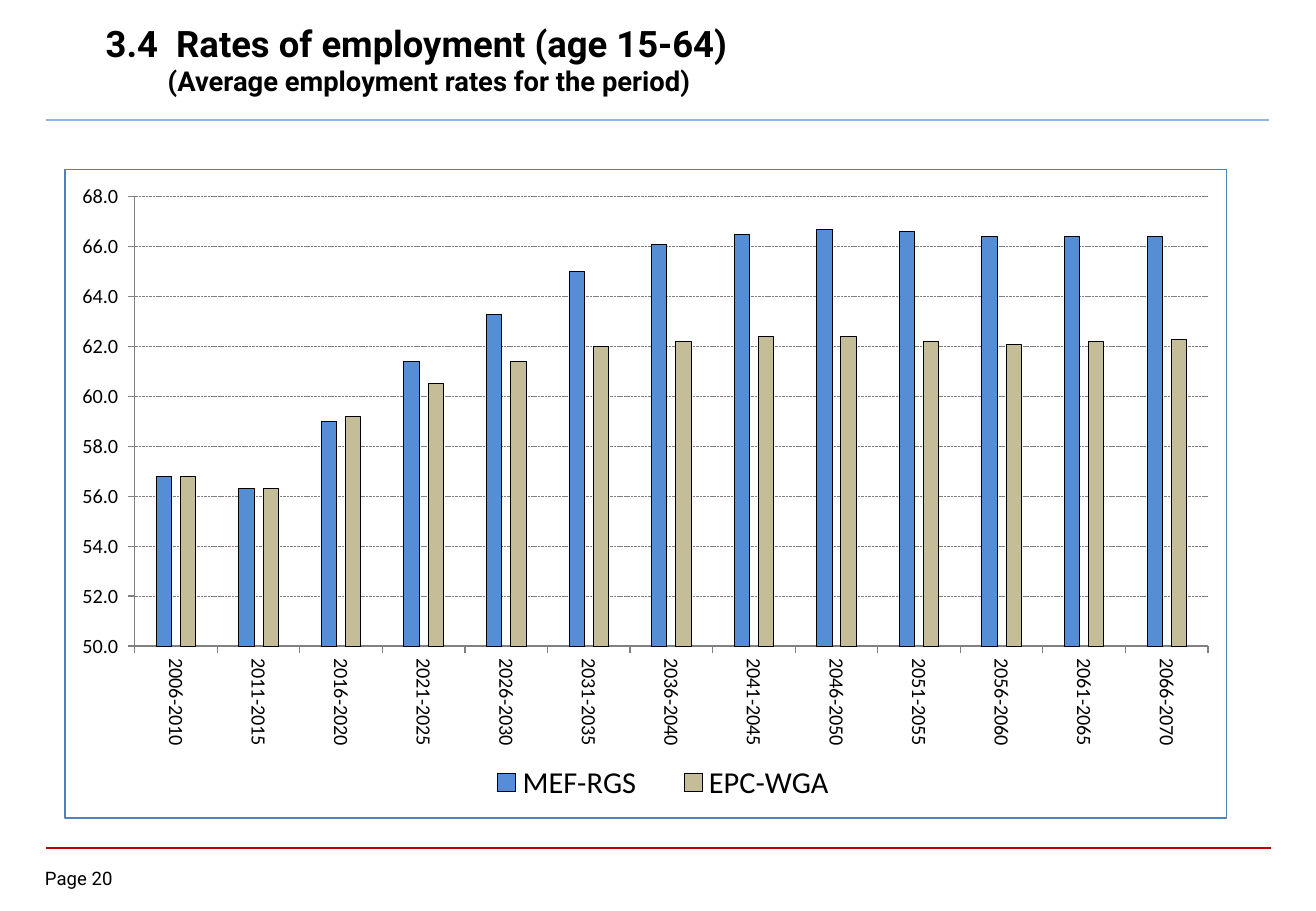
from pptx import Presentation
from pptx.chart.data import CategoryChartData
from pptx.dml.color import RGBColor
from pptx.enum import chart as ch, dml, shapes, text
from pptx.oxml import parse_xml
from pptx.oxml.ns import nsdecls, qn
from pptx.util import Inches, Pt

COLORS = {
    "text": "000000", "header_rule": "8EB4E3", "footer_rule": "C00000",
    "frame": "4F81BD", "axis": "808080", "mef": "558ED5", "epc": "C4BD97",
}
PERIODS = [f"{year}-{year + 4}" for year in range(2006, 2067, 5)]
RATES = {
    "MEF-RGS": ("mef", [56.8, 56.3, 59.0, 61.4, 63.3, 65.0, 66.1,
                        66.5, 66.7, 66.6, 66.4, 66.4, 66.4]),
    "EPC-WGA": ("epc", [56.8, 56.3, 59.2, 60.5, 61.4, 62.0, 62.2,
                        62.4, 62.4, 62.2, 62.1, 62.2, 62.3]),
}


def rgb(name):
    return RGBColor.from_string(COLORS[name])


def style_font(font, face, size, bold=False):
    font.name, font.size, font.bold = face, Pt(size), bold
    font.color.rgb = rgb("text")


def style_line(line, color, width):
    line.color.rgb = rgb(color)
    line.width = Pt(width)


def add_run(paragraph, words, size, bold=False):
    run = paragraph.add_run()
    run.text = words
    style_font(run.font, "Roboto", size, bold)


def fill_title(title):
    title.left, title.top = Inches(0.77), Inches(0.13)
    title.width, title.height = Inches(6.22), Inches(0.71)
    frame = title.text_frame
    frame.vertical_anchor = text.MSO_ANCHOR.MIDDLE
    frame.auto_size = text.MSO_AUTO_SIZE.NONE
    heading, subtitle = frame.paragraphs[0], frame.add_paragraph()
    subtitle._p.get_or_add_pPr().set("marL", str(Inches(0.51)))
    heading.alignment = subtitle.alignment = text.PP_ALIGN.LEFT
    add_run(heading, "3.4  Rates of employment (age 15-64)", 21.6, True)
    add_run(subtitle, "(Average employment rates for the period)", 16.2, True)


def add_rule(slide, y, right, color, width):
    rule = slide.shapes.add_connector(
        shapes.MSO_CONNECTOR.STRAIGHT,
        Inches(0.38), Inches(y), Inches(right), Inches(y))
    style_line(rule.line, color, width)
    rule._element.spPr.append(parse_xml(f"<a:effectLst {nsdecls('a')}/>"))


def add_page_number(slide):
    box = slide.shapes.add_textbox(
        Inches(0.37), Inches(7.14), Inches(0.73), Inches(0.22))
    frame = box.text_frame
    frame.word_wrap = True
    frame.margin_left = frame.margin_right = 0
    frame.margin_top = frame.margin_bottom = 0
    add_run(frame.paragraphs[0], "Page 20", 11)


def manual_layout(x, y, width, height, inner=False):
    """Return a chart layout given in fractions of the chart area."""
    target = '<c:layoutTarget val="inner"/>' if inner else ""
    return parse_xml(
        f"<c:layout {nsdecls('c')}><c:manualLayout>{target}"
        '<c:xMode val="edge"/><c:yMode val="edge"/>'
        f'<c:x val="{x}"/><c:y val="{y}"/>'
        f'<c:w val="{width}"/><c:h val="{height}"/>'
        "</c:manualLayout></c:layout>")


def style_axes(chart):
    periods, rates = chart.category_axis, chart.value_axis
    for axis in (periods, rates):
        style_font(axis.tick_labels.font, "Calibri", 12)
        axis.major_tick_mark = ch.XL_TICK_MARK.OUTSIDE
        axis.minor_tick_mark = ch.XL_TICK_MARK.NONE
        style_line(axis.format.line, "axis", 0.75)
    periods.tick_labels.font._element.getparent().getparent().getparent().find(
        qn("a:bodyPr")).set("rot", "5400000")
    rates.minimum_scale, rates.maximum_scale, rates.major_unit = 50, 68, 2
    rates.tick_labels.number_format = r"#,##0.0_ ;\-#,##0.0\ "
    rates.tick_labels.number_format_is_linked = False
    gridlines = rates.major_gridlines.format.line
    style_line(gridlines, "axis", 0.5)
    gridlines.dash_style = dml.MSO_LINE.SQUARE_DOT


def place_parts(chart):
    """Set the chart's frame and the places of its plot and legend."""
    area = chart.element.find(qn("c:chart"))
    area.addnext(parse_xml(
        f"<c:spPr {nsdecls('c', 'a')}><a:noFill/>"
        f'<a:ln w="{Pt(0.75)}"><a:solidFill>'
        f'<a:srgbClr val="{COLORS["frame"]}"/></a:solidFill></a:ln></c:spPr>'))
    plot_area = area.find(qn("c:plotArea"))
    for layout in plot_area.findall(qn("c:layout")):
        plot_area.remove(layout)
    plot_area.insert(0, manual_layout(0.06, 0.042, 0.924, 0.693, inner=True))
    legend = area.find(qn("c:legend"))
    for layout in legend.findall(qn("c:layout")):
        legend.remove(layout)
    legend.find(qn("c:legendPos")).addnext(
        manual_layout(0.34, 0.91, 0.35, 0.07))


def add_rates_chart(slide):
    data = CategoryChartData(number_format="0.0")
    data.categories = PERIODS
    for name, (_, values) in RATES.items():
        data.add_series(name, values)
    chart = slide.shapes.add_chart(
        ch.XL_CHART_TYPE.COLUMN_CLUSTERED, Inches(0.53), Inches(1.39),
        Inches(9.57), Inches(5.35), data).chart
    style_font(chart.font, "Calibri", 10)
    chart.has_title = False
    chart.has_legend = True
    chart.legend.position = ch.XL_LEGEND_POSITION.BOTTOM
    chart.legend.include_in_layout = False
    style_font(chart.legend.font, "Calibri", 18)
    columns = chart.plots[0]
    columns.gap_width, columns.overlap = 281, -58
    columns.vary_by_categories = False
    for series in columns.series:
        series.format.fill.solid()
        series.format.fill.fore_color.rgb = rgb(RATES[series.name][0])
        style_line(series.format.line, "text", 0.5)
    style_axes(chart)
    place_parts(chart)


def main():
    deck = Presentation()
    deck.slide_width, deck.slide_height = Inches(10.83), Inches(7.5)
    slide = deck.slides.add_slide(deck.slide_layouts[5])
    fill_title(slide.shapes.title)
    add_rule(slide, 0.99, 10.44, "header_rule", 1.5)
    add_rates_chart(slide)
    add_rule(slide, 6.98, 10.46, "footer_rule", 1)
    add_page_number(slide)
    deck.save("out.pptx")


if __name__ == "__main__":
    main()
